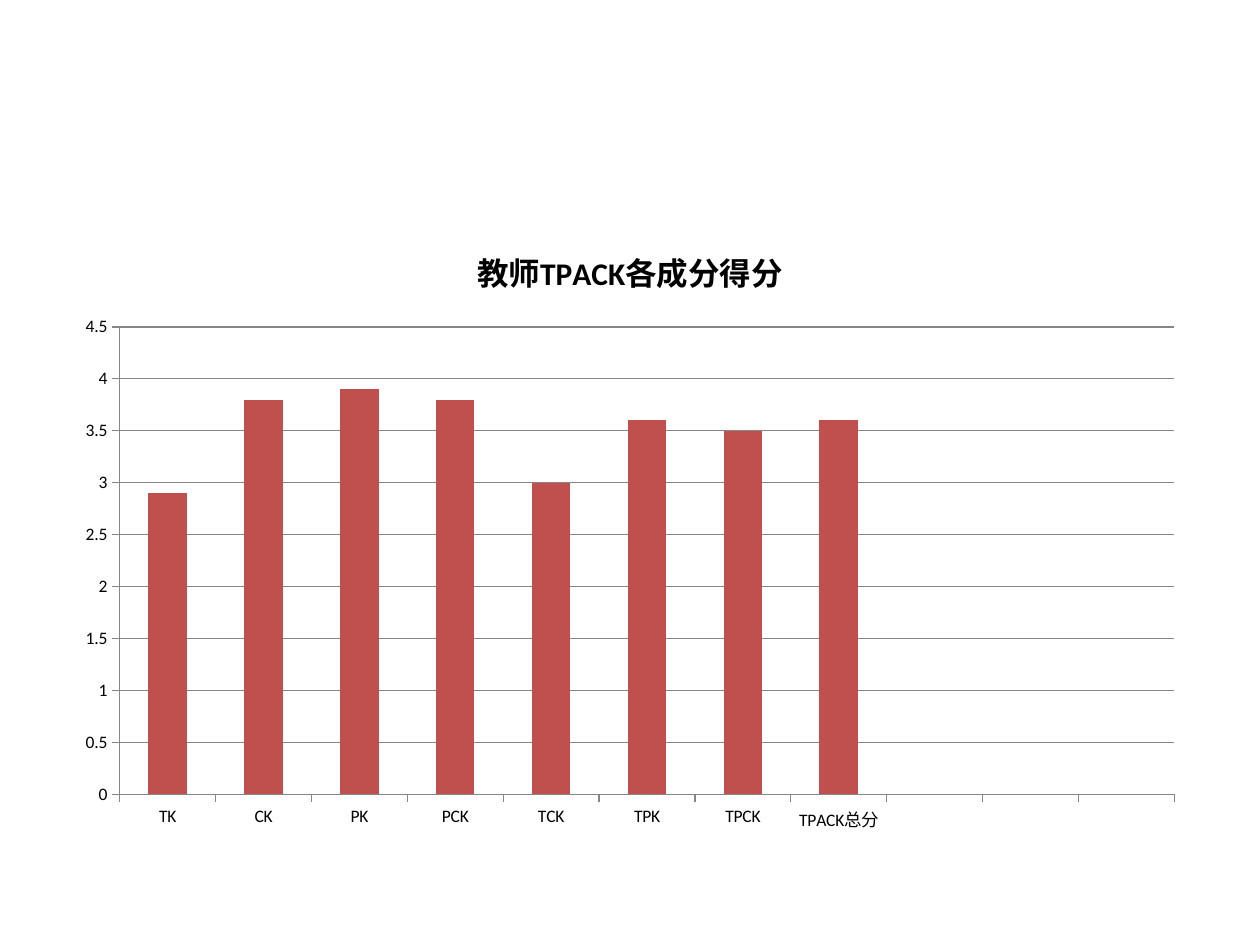
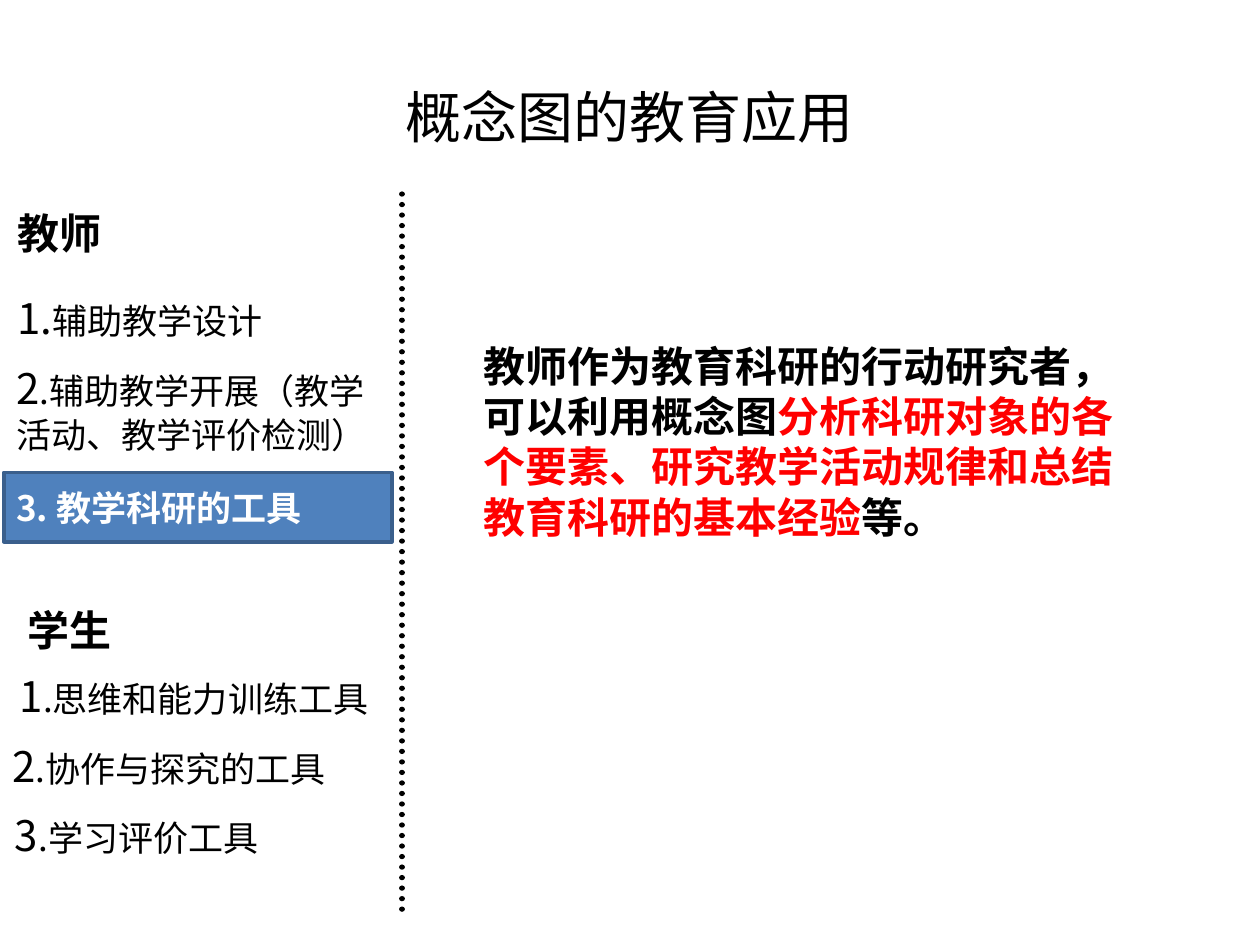
from dataclasses import dataclass

from lxml.etree import SubElement
from pptx import Presentation
from pptx.chart.data import CategoryChartData
from pptx.dml.color import RGBColor
from pptx.enum.chart import XL_CHART_TYPE as ChartType, XL_TICK_MARK as Tick
from pptx.enum.dml import MSO_LINE as Dash
from pptx.enum.shapes import MSO_CONNECTOR as Connector, MSO_SHAPE as Preset
from pptx.enum.text import MSO_ANCHOR as Anchor, MSO_AUTO_SIZE as AutoSize, PP_ALIGN as Align
from pptx.oxml.ns import qn
from pptx.util import Inches, Pt

CJK_FONT = "Noto Sans CJK SC"
CHART_FONT = "Calibri"
BLACK, WHITE, RED = "000000", "FFFFFF", "FF0000"
BAR_RED, GRID_GREY = "C0504D", "868686"
HIGHLIGHT, HIGHLIGHT_EDGE = "4F81BD", "3A5F8C"
ITEM_WIDTH, ITEM_HEIGHT = 3.08, 0.55

SCORES = {"TK": 2.9, "CK": 3.8, "PK": 3.9, "PCK": 3.8, "TCK": 3,
          "TPK": 3.6, "TPCK": 3.5, "TPACK总分": 3.6}
EMPTY_SLOTS = 3


@dataclass(frozen=True)
class Item:
    number: str
    label: str
    left: float
    top: float
    height: float = ITEM_HEIGHT
    align: Align = Align.LEFT
    current: bool = False


@dataclass(frozen=True)
class Passage:
    phrases: tuple[tuple[str, str], ...]
    left: float
    top: float
    width: float
    height: float


STUDENT_TOP = 5.25
ITEMS = (
    Item("1.", "辅助教学设计", 0.04, 2.25),
    Item("2", ".辅助教学开展（教学活动、教学评价检测）", 0.03, 2.88, height=0.73),
    Item("3", ". 教学科研的工具", 0.03, 3.75, current=True),
    Item("1", ".思维和能力训练工具", 0, STUDENT_TOP, align=Align.CENTER),
    Item("2", ".协作与探究的工具", 0, STUDENT_TOP + ITEM_HEIGHT),
    Item("3", ".学习评价工具", 0.02, STUDENT_TOP + 2 * ITEM_HEIGHT),
)
PASSAGES = (
    Passage((("教师", BLACK),), 0.04, 1.6, 1.42, 0.51),
    Passage((("学生", BLACK),), 0.12, 4.75, 1.42, 0.51),
    Passage((("教师作为教育科研的行动研究者，可以利用概念图", BLACK),
             ("分析科研对象的各个要素、研究教学活动规律和总结教育科研的基本经验", RED),
             ("等。", BLACK)), 3.74, 2.65, 5.43, 1.72),
)


def color(hex_code: str) -> RGBColor:
    return RGBColor.from_string(hex_code)


def style_font(font, size: float, hex_code: str, bold: bool = False, name: str = CJK_FONT) -> None:
    font.name = name
    font.size = Pt(size)
    font.bold = bold
    font.color.rgb = color(hex_code)


def draw_item(slide, item: Item) -> None:
    box = slide.shapes.add_shape(Preset.RECTANGLE, Inches(item.left), Inches(item.top),
                                 Inches(ITEM_WIDTH), Inches(item.height))
    box.shadow.inherit = False
    box.fill.solid()
    box.fill.fore_color.rgb = color(HIGHLIGHT if item.current else WHITE)
    if item.current:
        box.line.color.rgb = color(HIGHLIGHT_EDGE)
        box.line.width = Pt(2)
    else:
        box.line.fill.background()
    box.text_frame.word_wrap = True
    box.text_frame.vertical_anchor = Anchor.MIDDLE
    paragraph = box.text_frame.paragraphs[0]
    paragraph.alignment = item.align
    style_font(paragraph.font, 20, WHITE if item.current else BLACK, item.current)
    if item.current:
        paragraph.add_run().text = item.number + item.label
        return
    number = paragraph.add_run()
    number.text = item.number
    number.font.size = Pt(24)
    paragraph.add_run().text = item.label


def draw_passage(slide, passage: Passage) -> None:
    box = slide.shapes.add_textbox(Inches(passage.left), Inches(passage.top),
                                   Inches(passage.width), Inches(passage.height))
    box.text_frame.word_wrap = True
    box.text_frame.auto_size = AutoSize.SHAPE_TO_FIT_TEXT
    paragraph = box.text_frame.paragraphs[0]
    style_font(paragraph.font, 24, BLACK, bold=True)
    for words, hex_code in passage.phrases:
        run = paragraph.add_run()
        run.text = words
        if hex_code != BLACK:
            run.font.color.rgb = color(hex_code)


def draw_divider(slide, x: float, top: float, bottom: float) -> None:
    divider = slide.shapes.add_connector(Connector.STRAIGHT, Inches(x), Inches(top),
                                         Inches(x), Inches(bottom))
    divider.line.color.rgb = color(BLACK)
    divider.line.width = Pt(3)
    divider.line.dash_style = Dash.ROUND_DOT
    properties = divider._element.spPr
    properties.find(qn("a:ln")).set("cap", "rnd")
    SubElement(properties, qn("a:effectLst"))


def build_scores(deck) -> None:
    slide = deck.slides.add_slide(deck.slide_layouts[6])
    heading = "教师TPACK各成分得分"
    data = CategoryChartData()
    data.categories = [*SCORES, *[""] * EMPTY_SLOTS]
    data.add_series(heading, [*SCORES.values(), *[None] * EMPTY_SLOTS])
    chart = slide.shapes.add_chart(ChartType.COLUMN_CLUSTERED, Inches(0.5), Inches(1.75),
                                   Inches(9), Inches(4.95), data).chart
    style_font(chart.font, 10, BLACK, name=CHART_FONT)
    chart.has_legend = False
    chart.has_title = True
    title = chart.chart_title.text_frame.paragraphs[0]
    title.add_run().text = heading
    style_font(title.font, 18, BLACK, bold=True, name=CHART_FONT)

    plot = chart.plots[0]
    plot.gap_width = 150
    plot.vary_by_categories = False
    bars = plot.series[0].format.fill
    bars.solid()
    bars.fore_color.rgb = color(BAR_RED)

    scale = chart.value_axis
    scale.minimum_scale, scale.maximum_scale, scale.major_unit = 0, 4.5, 0.5
    scale.has_major_gridlines = True
    scale.tick_labels.number_format = "General"
    scale.tick_labels.number_format_is_linked = False
    for axis in (chart.category_axis, scale):
        axis.major_tick_mark = Tick.OUTSIDE
    for rule in (chart.category_axis, scale, scale.major_gridlines):
        rule.format.line.color.rgb = color(GRID_GREY)
        rule.format.line.width = Pt(0.75)


def build_applications(deck) -> None:
    slide = deck.slides.add_slide(deck.slide_layouts[5])
    title = slide.shapes.title
    title.left, title.top, title.width, title.height = map(Inches, (0.5, 0.3, 9, 1.25))
    title.text_frame.text = "概念图的教育应用"
    title.text_frame.vertical_anchor = Anchor.MIDDLE
    heading = title.text_frame.paragraphs[0]
    heading.alignment = Align.CENTER
    style_font(heading.font, 32, BLACK)

    draw_divider(slide, 3.19, 1.54, 7.29)
    for item in ITEMS:
        draw_item(slide, item)
    for passage in PASSAGES:
        draw_passage(slide, passage)


def main() -> None:
    deck = Presentation()
    deck.slide_width, deck.slide_height = Inches(10), Inches(7.5)
    build_scores(deck)
    build_applications(deck)
    deck.save("out.pptx")


if __name__ == "__main__":
    main()
